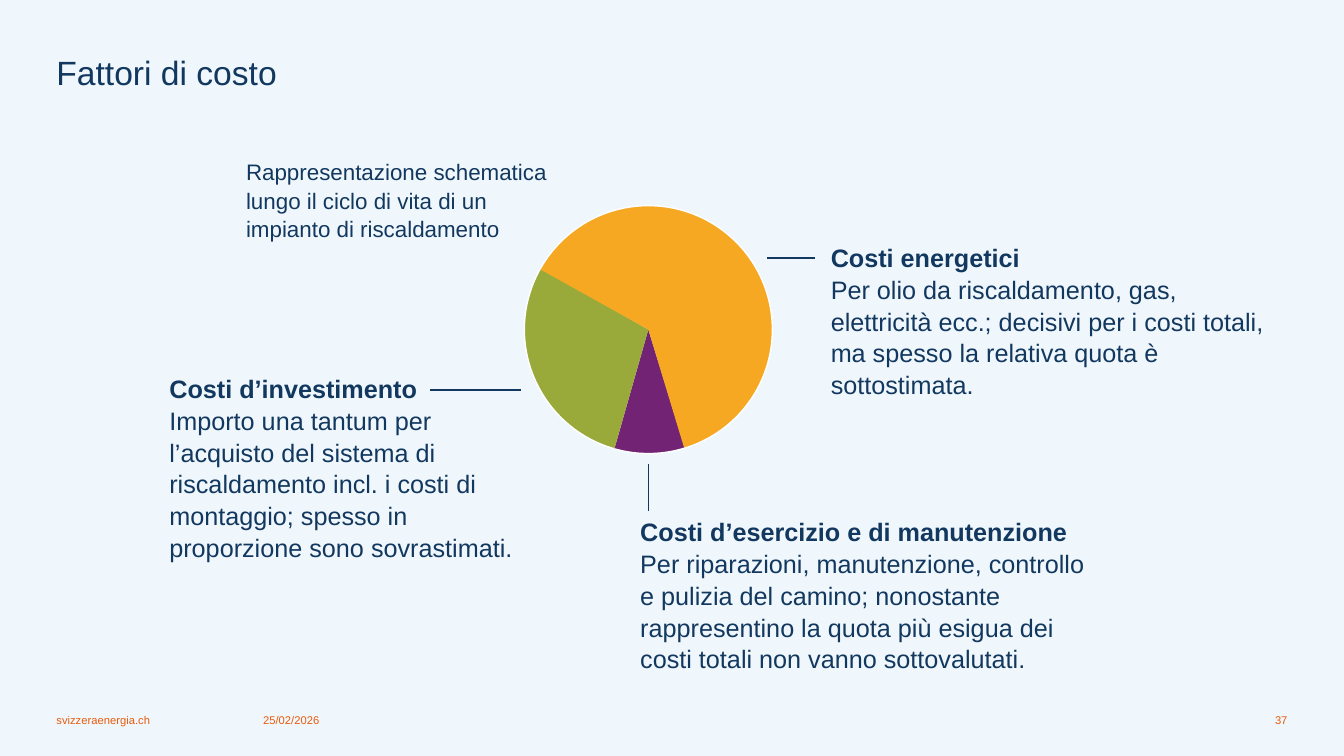
import dataclasses
import typing

import lxml.etree
import pptx
import pptx.dml.color
import pptx.enum.shapes
import pptx.enum.text
import pptx.oxml.ns
import pptx.util

Inches = pptx.util.Inches
Pt = pptx.util.Pt
Align = pptx.enum.text.PP_ALIGN
Anchor = pptx.enum.text.MSO_ANCHOR
Fit = pptx.enum.text.MSO_AUTO_SIZE

NAVY = "12385F"
ORANGE = "EA5B0C"
Box = tuple[float, float, float, float]


@dataclasses.dataclass
class Note:
    box: Box
    text: str
    head: str = ""
    size: float = 18


@dataclasses.dataclass
class Foot:
    box: Box
    text: str
    align: Align = Align.LEFT


@dataclasses.dataclass
class Wedge:
    start: float
    end: float
    fill: str


NOTES = [
    Note((8.24, 2.39, 4.5, 1.51),
         "Per olio da riscaldamento, gas, elettricità ecc.; decisivi per i costi "
         "totali, ma spesso la relativa quota è sottostimata.",
         "Costi energetici"),
    Note((1.68, 3.69, 3.54, 1.82),
         "Importo una tantum per l’acquisto del sistema di riscaldamento incl. i "
         "costi di montaggio; spesso in proporzione sono sovrastimati.",
         "Costi d’investimento"),
    Note((6.35, 5.11, 4.57, 1.51),
         "Per riparazioni, manutenzione, controllo e pulizia del camino; nonostante "
         "rappresentino la quota più esigua dei costi totali non vanno sottovalutati.",
         "Costi d’esercizio e di manutenzione"),
    Note((2.44, 1.56, 3.18, 0.81),
         "Rappresentazione schematica lungo il ciclo di vita di un impianto di "
         "riscaldamento", size=16),
]
FEET = [
    Foot((2.61, 7.06, 1.66, 0.15), "25/02/2026"),
    Foot((0.56, 7.06, 1.97, 0.15), "svizzeraenergia.ch"),
    Foot((11.6, 7.06, 1.17, 0.15), "37", Align.RIGHT),
]
LINES: list[Box] = [
    (4.27, 3.87, 5.17, 3.87),
    (7.61, 2.56, 8.08, 2.56),
    (6.43, 5.07, 6.43, 4.6),
]
WEDGES = [
    Wedge(181.96, 201.77, "732373"),
    Wedge(201.79, 47.98, "99A93A"),
    Wedge(47.7, 182.14, "F7A823"),
]
PIE: Box = (5.2, 2.04, 2.46, 2.46)
TURN = 129.6


def put(thing: typing.Any, style: dict[str, typing.Any]) -> None:
    for name, value in style.items():
        setattr(thing, name, value)


def tint(text: str) -> pptx.dml.color.RGBColor:
    return pptx.dml.color.RGBColor.from_string(text)


def inch(box: Box) -> list[int]:
    return [Inches(n) for n in box]


def frame(shape: typing.Any, anchor: Anchor, fit: Fit) -> typing.Any:
    put(shape.text_frame, {
        "margin_left": 0, "margin_top": 0, "margin_right": 0, "margin_bottom": 0,
        "word_wrap": True, "vertical_anchor": anchor, "auto_size": fit,
    })
    return shape.text_frame


def write(para: typing.Any, text: str, size: float, color: str = NAVY,
          bold: bool = False, align: Align = Align.LEFT, space: float = 1.0) -> None:
    put(para, {"alignment": align, "line_spacing": space})
    run = para.add_run()
    run.text = text
    put(run.font, {"name": "Arial", "size": Pt(size), "bold": bold})
    run.font.color.rgb = tint(color)


def title(slide: typing.Any, text: str, box: Box) -> None:
    shape = slide.shapes.title
    put(shape, dict(zip(("left", "top", "width", "height"), inch(box))))
    body = frame(shape, Anchor.TOP, Fit.NONE)
    write(body.paragraphs[0], text, 24, space=1.1)


def foot(slide: typing.Any, item: Foot) -> None:
    body = frame(slide.shapes.add_textbox(*inch(item.box)), Anchor.BOTTOM, Fit.NONE)
    write(body.paragraphs[0], item.text, 8, ORANGE, align=item.align)


def note(slide: typing.Any, item: Note) -> None:
    shape = slide.shapes.add_textbox(*inch(item.box))
    body = frame(shape, Anchor.TOP, Fit.SHAPE_TO_FIT_TEXT)
    para = body.paragraphs[0]
    if item.head:
        write(para, item.head, item.size, bold=True, space=1.05)
        para = body.add_paragraph()
    write(para, item.text, item.size, space=1.05)


def link(slide: typing.Any, ends: Box) -> None:
    kind = pptx.enum.shapes.MSO_CONNECTOR.STRAIGHT
    line = slide.shapes.add_connector(kind, *inch(ends))
    line.line.color.rgb = tint(NAVY)
    line.line.width = Pt(1)
    lxml.etree.SubElement(line._element.spPr, pptx.oxml.ns.qn("a:effectLst"))


def wedge(group: typing.Any, item: Wedge) -> None:
    arc = group.shapes.add_shape(pptx.enum.shapes.MSO_SHAPE.ARC, *inch(PIE))
    arc.adjustments[0] = item.start
    arc.adjustments[1] = item.end
    arc.rotation = TURN
    arc.shadow.inherit = False
    arc.fill.solid()
    arc.fill.fore_color.rgb = tint(item.fill)
    arc.line.color.rgb = tint("FFFFFF")
    arc.line.width = Pt(1)


def main() -> None:
    deck = pptx.Presentation()
    put(deck, {"slide_width": Inches(13.33), "slide_height": Inches(7.5)})
    slide = deck.slides.add_slide(deck.slide_layouts.get_by_name("Title Only"))
    slide.background.fill.solid()
    slide.background.fill.fore_color.rgb = tint("F0F7FC")

    title(slide, "Fattori di costo", (0.56, 0.48, 4.17, 0.87))
    for item in FEET:
        foot(slide, item)
    for ends in LINES:
        link(slide, ends)
    for item in NOTES:
        note(slide, item)
    group = slide.shapes.add_group_shape()
    for item in WEDGES:
        wedge(group, item)
    deck.save("out.pptx")


if __name__ == "__main__":
    main()
